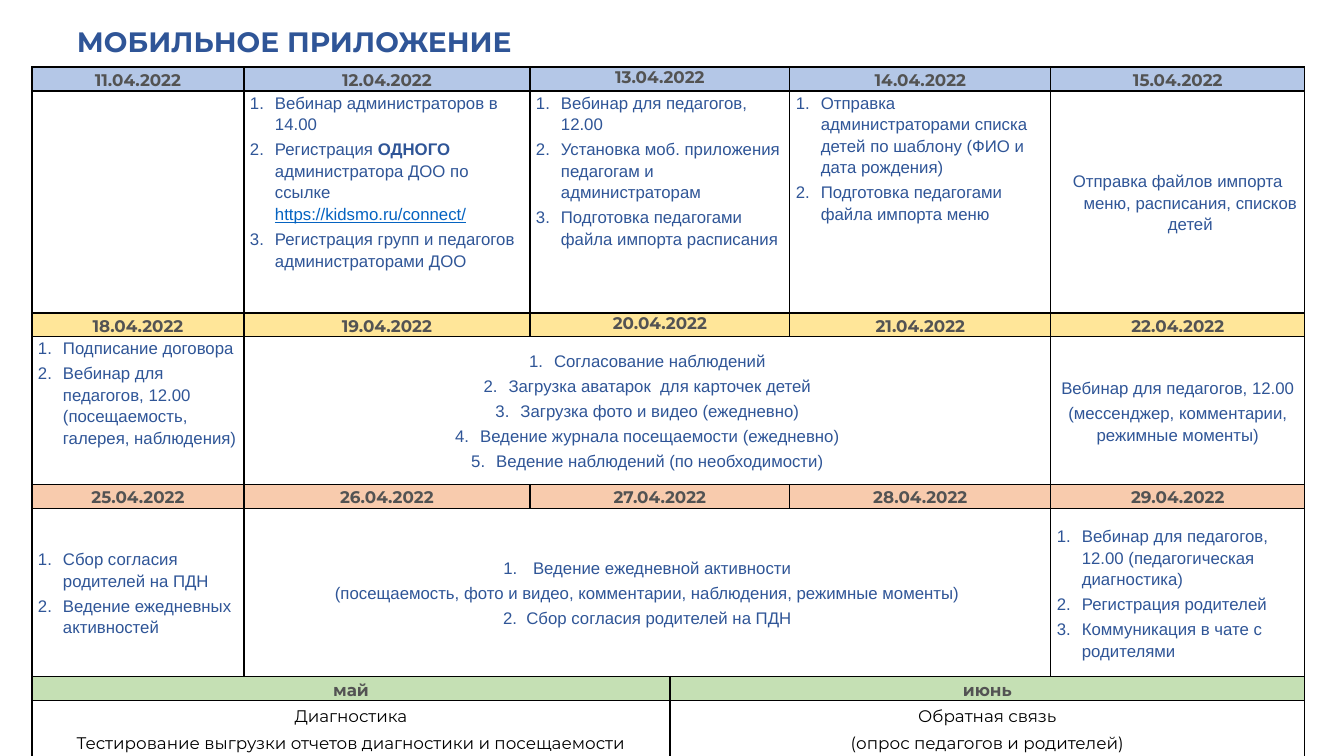
"""Build the launch calendar slide of the mobile application."""
from lxml.etree import SubElement
from pptx import Presentation
from pptx.dml.color import RGBColor
from pptx.enum.text import MSO_ANCHOR as Anchor, PP_ALIGN as Align
from pptx.oxml.ns import qn
from pptx.util import Pt

PX = 9071.43
COLORS = {
    "title": "2F5597", "plan": "2F5597", "date": "535353", "month": "000000",
    "link": "0563C1", "border": "000000", "blue": "B4C7E7", "yellow": "FFE699",
    "orange": "F8CBAD", "green": "C5E0B4",
}
FONTS = {"title": "Montserrat", "date": "Montserrat", "month": "Montserrat", "plan": "Arial"}
COLUMNS = [212, 286, 140, 120, 261, 254]
ROWS = [24, 222, 23, 148, 24, 168, 24, 56]
DAY_SPANS = [(0, 1), (1, 1), (2, 2), (4, 1), (5, 1)]
TIGHT_DATES = ("13.04.2022", "20.04.2022")
LEFT, CENTER = Align.LEFT, Align.CENTER
TOP, MIDDLE = Anchor.TOP, Anchor.MIDDLE

HEADERS = [
    (0, "blue", [f"{day}.04.2022" for day in range(11, 16)]),
    (2, "yellow", [f"{day}.04.2022" for day in range(18, 23)]),
    (4, "orange", [f"{day}.04.2022" for day in range(25, 30)]),
]

# Row, column, span, alignment, anchor, hanging indent, numbered paragraphs, paragraphs
PLANS = [
    (1, 1, 1, LEFT, TOP, True, 3, [
        "Вебинар администраторов в 14.00",
        [("Регистрация ", ""), ("ОДНОГО", "strong"), (" администратора ДОО по ссылке ", ""),
         ("https://kidsmo.ru/connect/", "link")],
        "Регистрация групп и педагогов администраторами ДОО"]),
    (1, 2, 2, LEFT, TOP, True, 3, [
        "Вебинар для педагогов, 12.00",
        "Установка моб. приложения педагогам и администраторам",
        "Подготовка педагогами файла импорта расписания"]),
    (1, 4, 1, LEFT, TOP, True, 2, [
        "Отправка администраторами списка детей по шаблону (ФИО и дата рождения)",
        "Подготовка педагогами файла импорта меню"]),
    (1, 5, 1, CENTER, MIDDLE, True, 0, [
        "Отправка файлов импорта меню, расписания, списков детей"]),
    (3, 0, 1, LEFT, TOP, True, 2, [
        "Подписание договора",
        "Вебинар для педагогов, 12.00 (посещаемость, галерея, наблюдения)"]),
    (3, 1, 4, CENTER, MIDDLE, True, 5, [
        "Согласование наблюдений",
        "Загрузка аватарок  для карточек детей",
        "Загрузка фото и видео (ежедневно)",
        "Ведение журнала посещаемости (ежедневно)",
        "Ведение наблюдений (по необходимости)"]),
    (3, 5, 1, CENTER, MIDDLE, False, 0, [
        "Вебинар для педагогов, 12.00",
        "(мессенджер, комментарии, режимные моменты)"]),
    (5, 0, 1, LEFT, MIDDLE, True, 2, [
        "Сбор согласия родителей на ПДН",
        "Ведение ежедневных активностей"]),
    (5, 1, 4, CENTER, MIDDLE, True, 1, [
        " Ведение ежедневной активности",
        "(посещаемость, фото и видео, комментарии, наблюдения, режимные моменты)",
        "2.  Сбор согласия родителей на ПДН"]),
    (5, 5, 1, LEFT, MIDDLE, True, 3, [
        "Вебинар для педагогов, 12.00 (педагогическая диагностика)",
        "Регистрация родителей",
        "Коммуникация в чате с родителями"]),
]
MONTHS = [
    (0, "май", ["Диагностика", "Тестирование выгрузки отчетов диагностики и посещаемости"]),
    (3, "июнь", ["Обратная связь", "(опрос педагогов и родителей)"]),
]


def px(length):
    return round(length * PX)


def write(cell, style, paragraphs, align=CENTER, anchor=TOP, hanging=False, numbered=0):
    cell.vertical_anchor = anchor
    for index, content in enumerate(paragraphs):
        para = cell.text_frame.paragraphs[0] if index == 0 else cell.text_frame.add_paragraph()
        properties = para._p.get_or_add_pPr()
        if hanging:
            properties.set("marL", str(px(25)))
            properties.set("indent", str(-px(25)))
        if index < numbered:
            SubElement(properties, qn("a:buAutoNum"), type="arabicPeriod")
        para.alignment = align
        para.line_spacing = 1.0 if content in TIGHT_DATES else 1.15
        para.space_before = Pt(2.4 if index else 0)
        for text, accent in [(content, "")] if isinstance(content, str) else content:
            span = para.add_run()
            span.text = text
            span.font.name = FONTS[style]
            span.font.size = Pt(12)
            span.font.bold = style == "date" or accent == "strong"
            span.font.underline = accent == "link"
            span.font.color.rgb = RGBColor.from_string(COLORS["link" if accent == "link" else style])


deck = Presentation()
deck.slide_width, deck.slide_height = px(1344), px(756)
page = deck.slides.add_slide(deck.slide_layouts[5])

title = page.shapes.title
title.left, title.top, title.width, title.height = px(77), px(24), px(957), px(34)
frame = title.text_frame
frame.margin_left = frame.margin_top = frame.margin_right = frame.margin_bottom = 0
frame.vertical_anchor = TOP
frame.paragraphs[0].alignment = LEFT
span = frame.paragraphs[0].add_run()
span.text = "МОБИЛЬНОЕ ПРИЛОЖЕНИЕ"
span.font.name = FONTS["title"]
span.font.size = Pt(20)
span.font.bold = True
span.font.color.rgb = RGBColor.from_string(COLORS["title"])

table = page.shapes.add_table(
    len(ROWS), len(COLUMNS), px(32), px(67), px(sum(COLUMNS)), px(sum(ROWS))).table
table.first_row = table.horz_banding = False
for column, width in zip(table.columns, COLUMNS):
    column.width = px(width)
for row, height in zip(table.rows, ROWS):
    row.height = px(height)

for cell in table.iter_cells():
    cell.margin_left = cell.margin_right = px(6)
    cell.margin_top = cell.margin_bottom = 0
    for side in ("lnL", "lnR", "lnT", "lnB"):
        line = SubElement(cell._tc.get_or_add_tcPr(), qn(f"a:{side}"), w=str(Pt(1)))
        SubElement(SubElement(line, qn("a:solidFill")), qn("a:srgbClr"), val=COLORS["border"])
    cell.fill.background()

for row, color, dates in HEADERS:
    for (column, width), date in zip(DAY_SPANS, dates):
        cell = table.cell(row, column)
        if width > 1:
            cell.merge(table.cell(row, column + width - 1))
        cell.fill.solid()
        cell.fill.fore_color.rgb = RGBColor.from_string(COLORS[color])
        write(cell, "date", [date])

for row, column, width, align, anchor, hanging, numbered, paragraphs in PLANS:
    cell = table.cell(row, column)
    if width > 1:
        cell.merge(table.cell(row, column + width - 1))
    write(cell, "plan", paragraphs, align, anchor, hanging, numbered)

for column, month, tasks in MONTHS:
    for row, style, paragraphs in ((6, "date", [month]), (7, "month", tasks)):
        cell = table.cell(row, column)
        cell.merge(table.cell(row, column + 2))
        write(cell, style, paragraphs, anchor=MIDDLE)
    header = table.cell(6, column)
    header.fill.solid()
    header.fill.fore_color.rgb = RGBColor.from_string(COLORS["green"])

deck.save("out.pptx")
